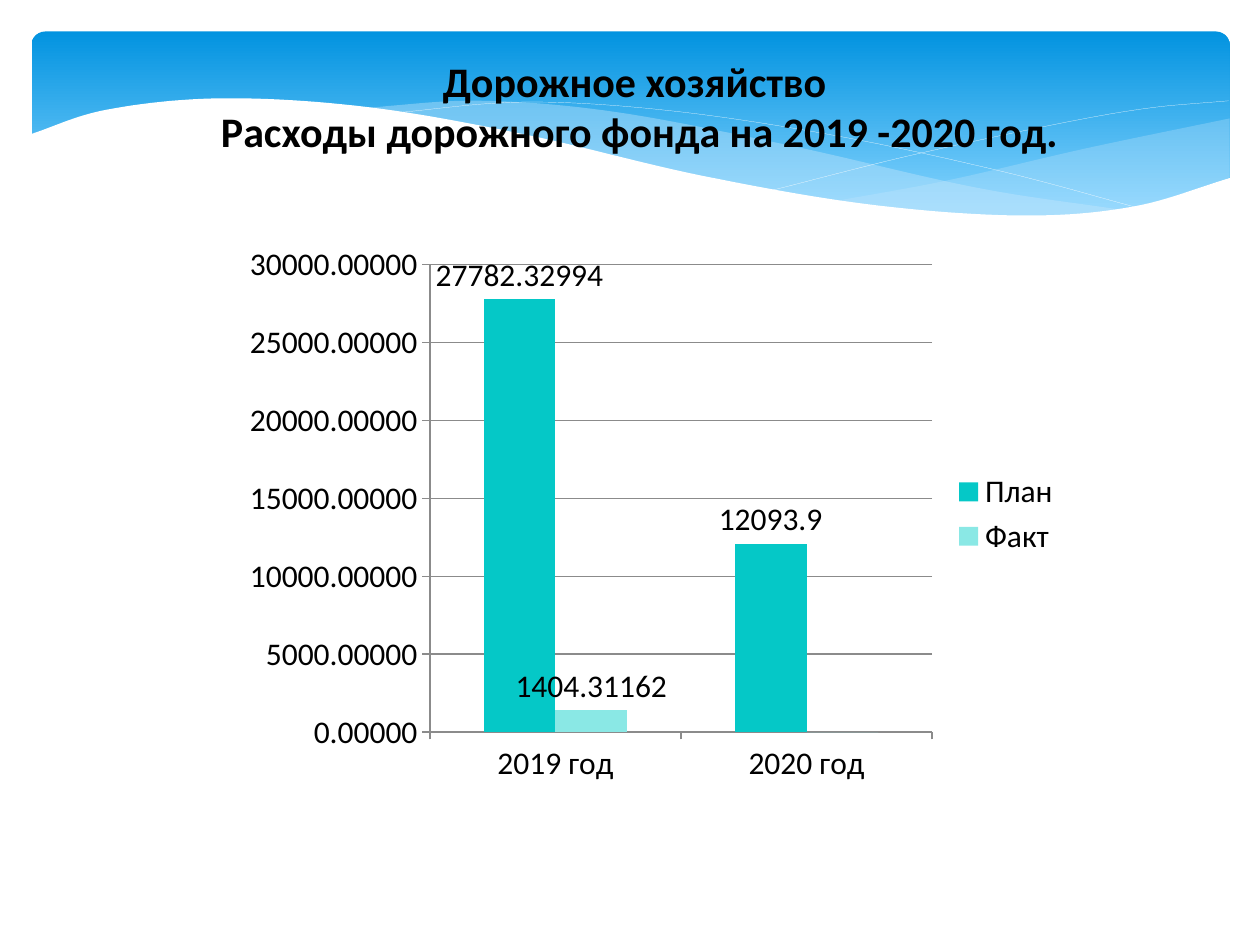
from lxml.etree import SubElement
from pptx import Presentation
from pptx.chart.data import CategoryChartData
from pptx.dml.color import RGBColor
from pptx.enum.chart import XL_CHART_TYPE, XL_LABEL_POSITION, XL_LEGEND_POSITION, XL_TICK_MARK
from pptx.enum.shapes import MSO_SHAPE
from pptx.enum.text import MSO_ANCHOR, PP_ALIGN
from pptx.oxml.ns import qn
from pptx.util import Inches, Pt

BLACK = RGBColor(0x00, 0x00, 0x00)
WHITE = RGBColor(0xFF, 0xFF, 0xFF)
GRAY = RGBColor(0x8B, 0x8B, 0x8B)
SKY = RGBColor(0x02, 0x93, 0xE0)
LIGHT_SKY = RGBColor(0x83, 0xD3, 0xFE)
PALE = RGBColor(0xC6, 0xE7, 0xFC)
TEAL = RGBColor(0x05, 0xC8, 0xC7)
LIGHT_TEAL = RGBColor(0x8A, 0xE8, 0xE5)
STEPS = 12


def smooth_curve(knots):
    """Return points on a Catmull-Rom curve that passes through every knot."""
    (x0, y0), (x1, y1) = knots[:2]
    (xm, ym), (xn, yn) = knots[-2:]
    padded = [(2 * x0 - x1, 2 * y0 - y1), *knots, (2 * xn - xm, 2 * yn - ym)]
    points = []
    for quad in zip(padded, padded[1:], padded[2:], padded[3:]):
        for step in range(STEPS):
            t = step / STEPS
            points.append(tuple(
                b + t * (c - a) / 2 + t**2 * (2 * a - 5 * b + 4 * c - d) / 2
                + t**3 * (3 * b - a - 3 * c + d) / 2
                for a, b, c, d in zip(*quad)))
    return points + [knots[-1]]


def add_outline(shapes, points, closed):
    """Add a freeform through points given in inches."""
    start, *rest = [(Inches(x), Inches(y)) for x, y in points]
    builder = shapes.build_freeform(*start)
    builder.add_line_segments(rest, close=closed)
    sp = builder.convert_to_shape()
    sp.shadow.inherit = False
    return sp


prs = Presentation()
prs.slide_width, prs.slide_height = Inches(10), Inches(7.5)
s = prs.slides.add_slide(prs.slide_layouts[5])

banner = s.shapes.add_shape(MSO_SHAPE.ROUNDED_RECTANGLE,
                            Inches(0.25), Inches(0.25), Inches(9.51), Inches(1.56))
banner.adjustments[0] = 0.07
banner.shadow.inherit = False
banner.line.fill.background()
banner.fill.gradient()
banner.fill.gradient_angle = 270
for stop, color, position in zip(banner.fill.gradient_stops, (SKY, LIGHT_SKY), (0, 0.9)):
    stop.color.rgb = color
    stop.position = position

right_top = [(6.61, 1.6), (7.53, 1.43), (8.61, 1.18), (9.76, 0.94)]
right_bottom = [(9.76, 1.41), (9.05, 1.63), (8.24, 1.72), (7.45, 1.69), (6.61, 1.6)]
middle_top = [(2.86, 0.86), (3.8, 0.8), (4.89, 0.89), (6.29, 1.16), (7.75, 1.49), (8.93, 1.67)]
middle_bottom = [(8.93, 1.67), (8.07, 1.73), (6.8, 1.63), (5.3, 1.35), (4.04, 1.06), (2.86, 0.86)]
falling_line = [(3.09, 0.9), (4.16, 0.81), (5.33, 0.88), (6.65, 1.08), (7.95, 1.36), (9.07, 1.66)]
rising_line = [(6.13, 1.51), (7.2, 1.24), (8.36, 0.99), (9.1, 0.86), (9.75, 0.8)]
white_top = [(0.23, 1.07), (0.85, 0.87), (1.77, 0.78), (2.92, 0.85), (4.18, 1.07),
             (5.55, 1.39), (6.88, 1.62), (8.09, 1.71), (8.99, 1.64), (9.77, 1.41)]
white_bottom = [(9.77, 2.24), (0.23, 2.24)]

for top, bottom, alpha in [(right_top, right_bottom, 29), (middle_top, middle_bottom, 40)]:
    wave = add_outline(s.shapes, smooth_curve(top) + smooth_curve(bottom), True)
    wave.line.fill.background()
    wave.fill.solid()
    wave.fill.fore_color.rgb = PALE
    clr = wave._element.spPr.find(qn("a:solidFill"))[0]
    SubElement(clr, qn("a:alpha"), val=str(alpha * 1000))

for knots in (falling_line, rising_line):
    line = add_outline(s.shapes, smooth_curve(knots), False)
    line.fill.background()
    line.line.color.rgb = WHITE
    line.line.width = Pt(0.1)

wave = add_outline(s.shapes, smooth_curve(white_top) + white_bottom, True)
wave.line.fill.background()
wave.fill.solid()
wave.fill.fore_color.rgb = WHITE

title = s.shapes.title
s.shapes._spTree.append(title._element)
title.left, title.top = Inches(0.62), Inches(0.39)
title.width, title.height = Inches(8.91), Inches(0.91)
tf = title.text_frame
tf.word_wrap = True
tf.vertical_anchor = MSO_ANCHOR.TOP
title_font = {"name": "Calibri", "size": Pt(24), "bold": True}
title_lines = ["Дорожное хозяйство ", "Расходы дорожного фонда на 2019 -2020 год."]
for i, text in enumerate(title_lines):
    p = tf.add_paragraph() if i else tf.paragraphs[0]
    p.alignment = PP_ALIGN.CENTER
    r = p.add_run()
    r.text = text
    r.font.color.rgb = BLACK
    for name, value in title_font.items():
        setattr(r.font, name, value)

data = CategoryChartData()
data.categories = ["2019 год", "2020 год"]
data.add_series("План", (27782.32994, 12093.9))
data.add_series("Факт", (1404.31162, 0))
chart = s.shapes.add_chart(XL_CHART_TYPE.COLUMN_CLUSTERED, Inches(1.85), Inches(1.86),
                           Inches(6.67), Inches(4.44), data).chart
chart.has_title = False
chart.font.name = "Calibri"
chart.font.size = Pt(18)
chart.font.color.rgb = BLACK
chart.has_legend = True
chart.legend.position = XL_LEGEND_POSITION.RIGHT
chart.legend.include_in_layout = False

for axis in (chart.category_axis, chart.value_axis):
    axis.major_tick_mark = XL_TICK_MARK.OUTSIDE
    axis.minor_tick_mark = XL_TICK_MARK.NONE
    axis.format.line.color.rgb = GRAY
value_axis = chart.value_axis
value_axis.minimum_scale, value_axis.maximum_scale = 0, 30000
value_axis.major_unit = 5000
value_axis.tick_labels.number_format = "0.00000"
value_axis.tick_labels.number_format_is_linked = False
value_axis.has_major_gridlines = True
value_axis.major_gridlines.format.line.color.rgb = GRAY

plot = chart.plots[0]
plot.gap_width = 150
plot.overlap = 0
plot.vary_by_categories = False
label_format = {"show_value": True, "position": XL_LABEL_POSITION.OUTSIDE_END,
                "number_format": "General", "number_format_is_linked": False}
for series, color in zip(plot.series, (TEAL, LIGHT_TEAL)):
    series.format.fill.solid()
    series.format.fill.fore_color.rgb = color
    for name, value in label_format.items():
        setattr(series.data_labels, name, value)

fact_labels = plot.series[1].data_labels._element
zero_label = fact_labels.makeelement(qn("c:dLbl"))
SubElement(zero_label, qn("c:idx"), val="1")
SubElement(zero_label, qn("c:delete"), val="1")
fact_labels.insert(0, zero_label)

prs.save("out.pptx")
